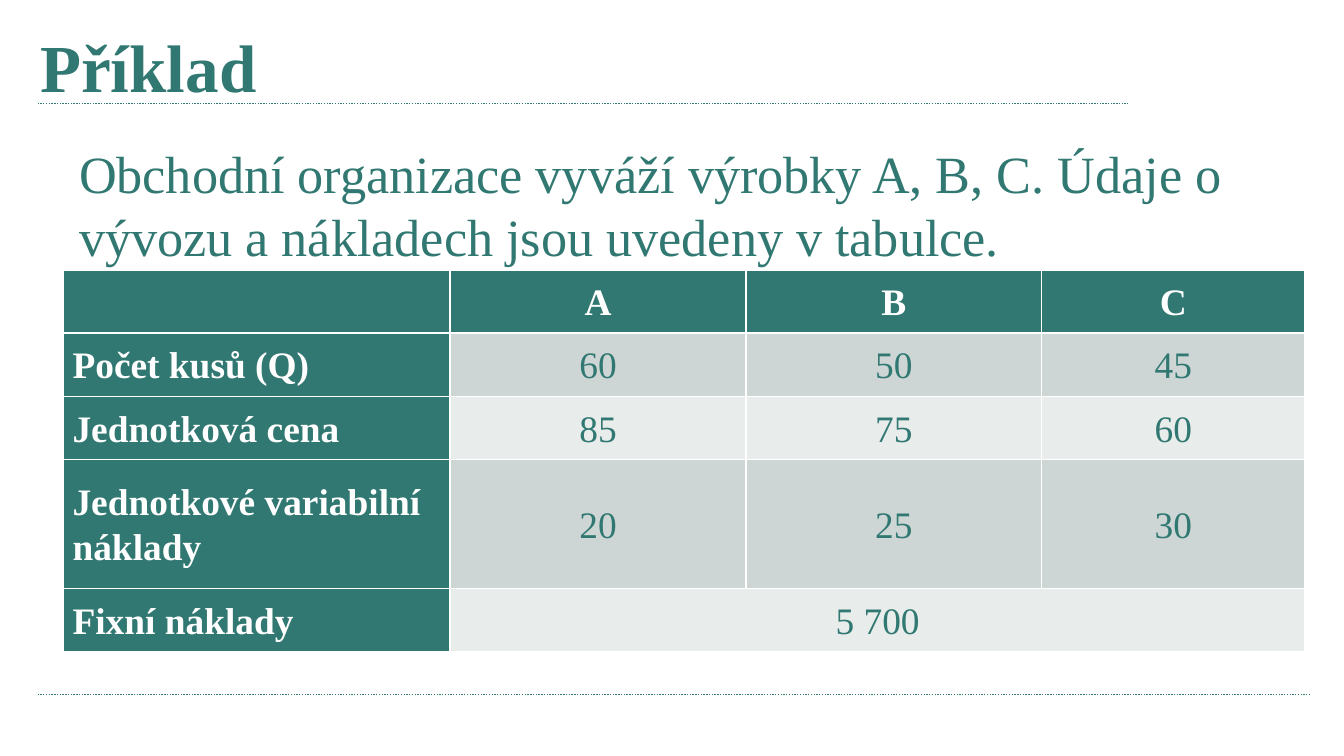
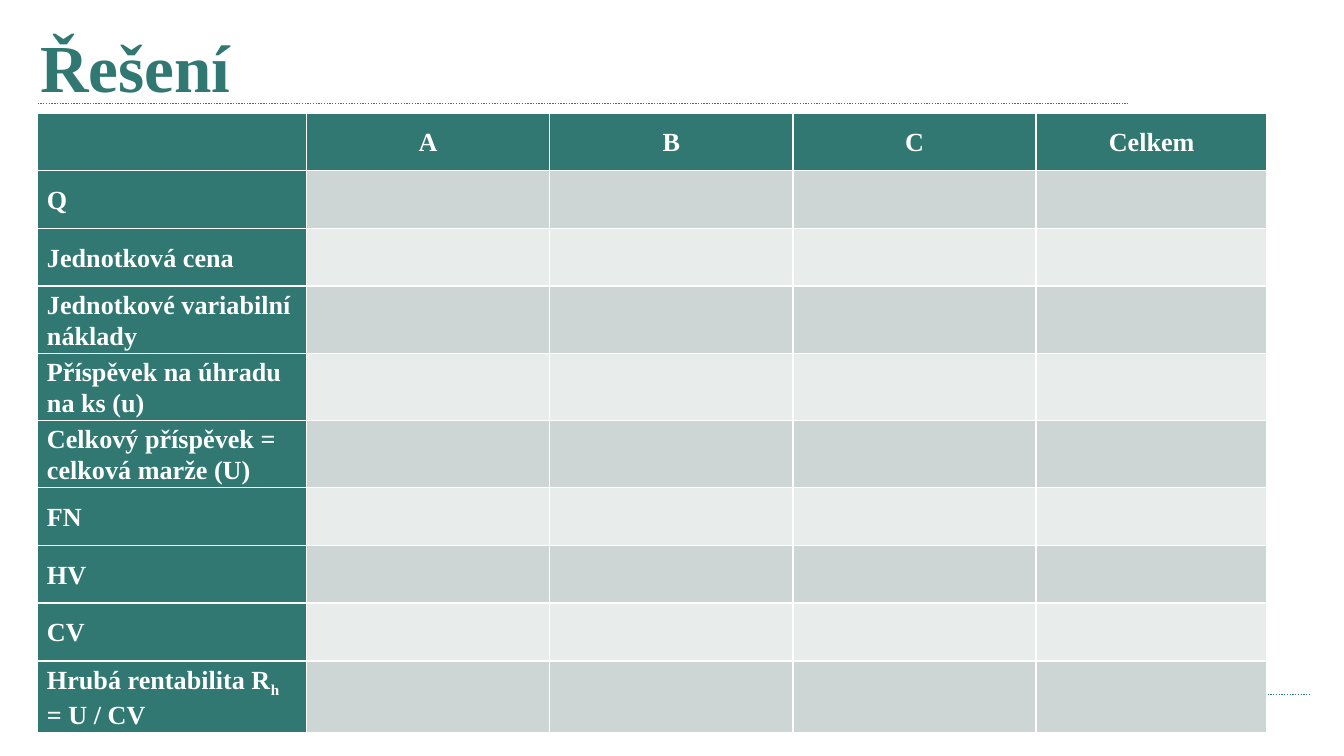
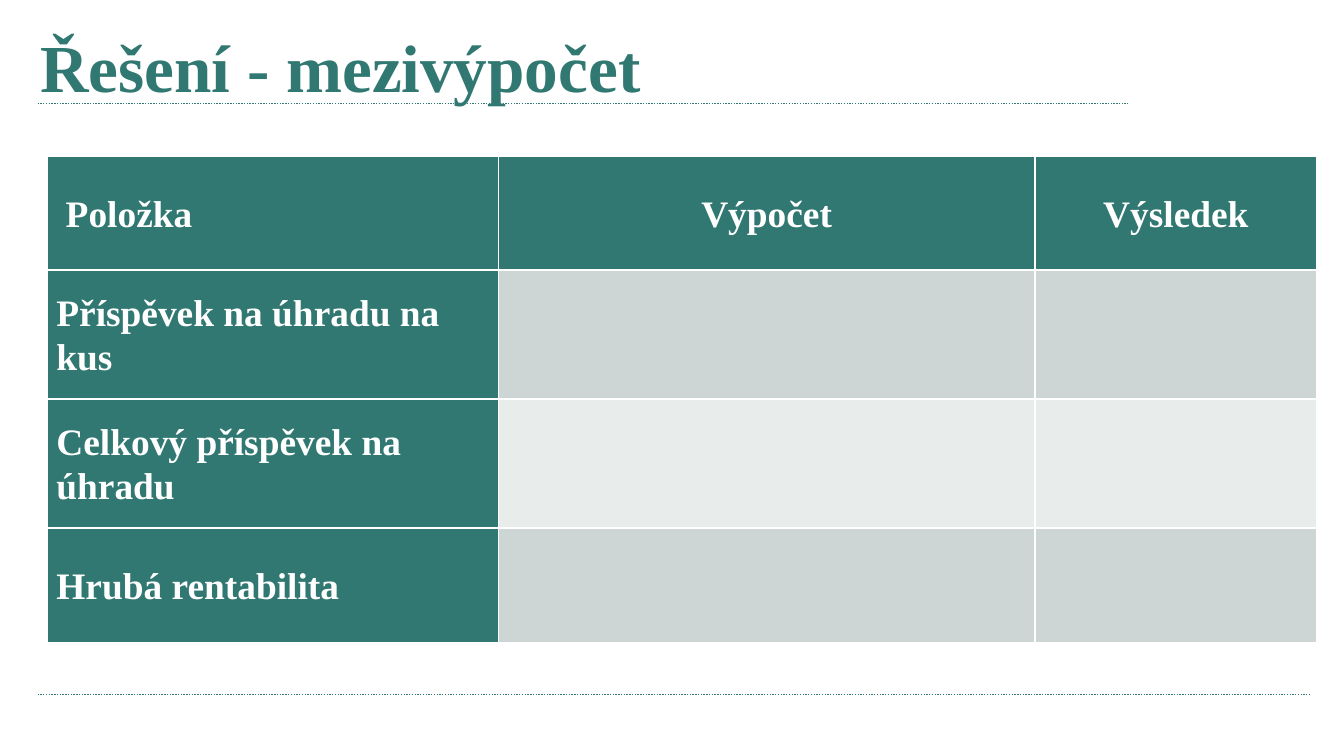
from lxml import etree
from pptx import Presentation
from pptx import util as u
from pptx.dml import color
from pptx.enum import dml, shapes, text
from pptx.oxml import ns

HUES = {"teal": "307871", "white": "FFFFFF", "dark": "CDD6D5", "light": "E8ECEB"}
FONT = "Times New Roman"
LINES = [(0.77, 8.39), (5.17, 9.75)]
EDGE = 0.28

COSTS = [
    ["", "A", "B", "C"],
    ["Počet kusů (Q)", "60", "50", "45"],
    ["Jednotková cena", "85", "75", "60"],
    ["Jednotkové variabilní náklady", "20", "25", "30"],
    ["Fixní náklady", "5 700", "", ""],
]
MARGIN = [
    "Q",
    "Jednotková cena",
    "Jednotkové variabilní náklady",
    "Příspěvek na úhradu na ks (u)",
    "Celkový příspěvek = celková marže (U)",
    "FN",
    "HV",
    "CV",
    [("Hrubá rentabilita R", 0), ("h ", -25), ("= U / CV", 0)],
]
STEPS = ["Příspěvek na úhradu na kus", "Celkový příspěvek na úhradu", "Hrubá rentabilita"]


def hue(name):
    return color.RGBColor.from_string(HUES[name])


def add_run(para, words, size, tone, bold=False, base=0):
    run = para.add_run()
    run.text = words
    font = run.font
    font.name, font.size, font.bold = FONT, u.Pt(size), bold
    font.color.rgb = hue(tone)
    if base:
        run._r.get_or_add_rPr().set("baseline", str(base * 1000))


def add_rule(slide, top, end):
    rule = slide.shapes.add_connector(
        shapes.MSO_CONNECTOR.STRAIGHT,
        u.Inches(EDGE), u.Inches(top), u.Inches(end), u.Inches(top))
    rule.line.color.rgb = hue("teal")
    rule.line.width = u.Pt(0.75)
    rule.line.dash_style = dml.MSO_LINE.ROUND_DOT
    etree.SubElement(rule._element.spPr, ns.qn("a:effectLst"))


def add_text(slide, box, words, size, bold=False):
    frame = slide.shapes.add_textbox(*map(u.Inches, box)).text_frame
    frame.word_wrap = True
    add_run(frame.paragraphs[0], words, size, "teal", bold)
    return frame


def add_slide(deck, title):
    slide = deck.slides.add_slide(deck.slide_layouts[6])
    for top, end in LINES:
        add_rule(slide, top, end)
    add_text(slide, (0.2, 0.14, 8.82, 0.79), title, 36, True)
    return slide


def fill_cell(cell, words, row, col, size):
    head = row == 0 or col == 0
    cell.fill.solid()
    cell.fill.fore_color.rgb = hue("teal" if head else "dark" if row % 2 else "light")
    cell.vertical_anchor = text.MSO_ANCHOR.MIDDLE
    cell.margin_left = cell.margin_right = u.Inches(0.07)
    cell.margin_top = cell.margin_bottom = 0
    para = cell.text_frame.paragraphs[0]
    para.line_spacing = 1.07
    para.alignment = text.PP_ALIGN.CENTER if col else text.PP_ALIGN.LEFT
    if not words:
        para.font.size = u.Pt(size)
        return
    parts = [(words, 0)] if isinstance(words, str) else words
    for part, base in parts:
        add_run(para, part, size, "white" if head else "teal", head, base)


def add_grid(slide, left, top, cols, rows, data, size):
    grid = slide.shapes.add_table(
        len(rows), len(cols), u.Inches(left), u.Inches(top),
        u.Inches(sum(cols)), u.Inches(sum(rows))).table
    grid.first_col = True
    for col, width in zip(grid.columns, cols):
        col.width = u.Inches(width)
    for row, height in zip(grid.rows, rows):
        row.height = u.Inches(height)
    for r, line in enumerate(data):
        for c, words in enumerate(line):
            fill_cell(grid.cell(r, c), words, r, c, size)
    return grid


def pad(heads, names):
    return [heads] + [[name] + [""] * (len(heads) - 1) for name in names]


def main():
    deck = Presentation()
    deck.slide_width = u.Inches(10)
    deck.slide_height = deck.slide_width * 9 // 16

    slide = add_slide(deck, "Příklad")
    intro = add_text(
        slide, (0.49, 1, 9.34, 1.95),
        "Obchodní organizace vyváží výrobky A, B, C. Údaje o vývozu a nákladech "
        "jsou uvedeny v tabulce.", 28)
    intro.auto_size = text.MSO_AUTO_SIZE.SHAPE_TO_FIT_TEXT
    grid = add_grid(slide, 0.47, 2.01, [2.88, 2.2, 2.2, 1.96],
                    [0.47, 0.47, 0.47, 0.96, 0.47], COSTS, 20)
    grid.cell(4, 1).merge(grid.cell(4, 3))

    slide = add_slide(deck, "Řešení")
    add_grid(slide, EDGE, 0.84, [2] + [1.81] * 3 + [1.72], [0.43] * 10,
             pad(["", "A", "B", "C", "Celkem"], MARGIN), 14)

    slide = add_slide(deck, "Řešení - mezivýpočet")
    add_grid(slide, 0.35, 1.16, [3.36, 3.99, 2.1], [0.85, 0.96, 0.96, 0.85],
             pad([" Položka", "Výpočet", "Výsledek"], STEPS), 20)

    deck.save("out.pptx")


if __name__ == "__main__":
    main()
